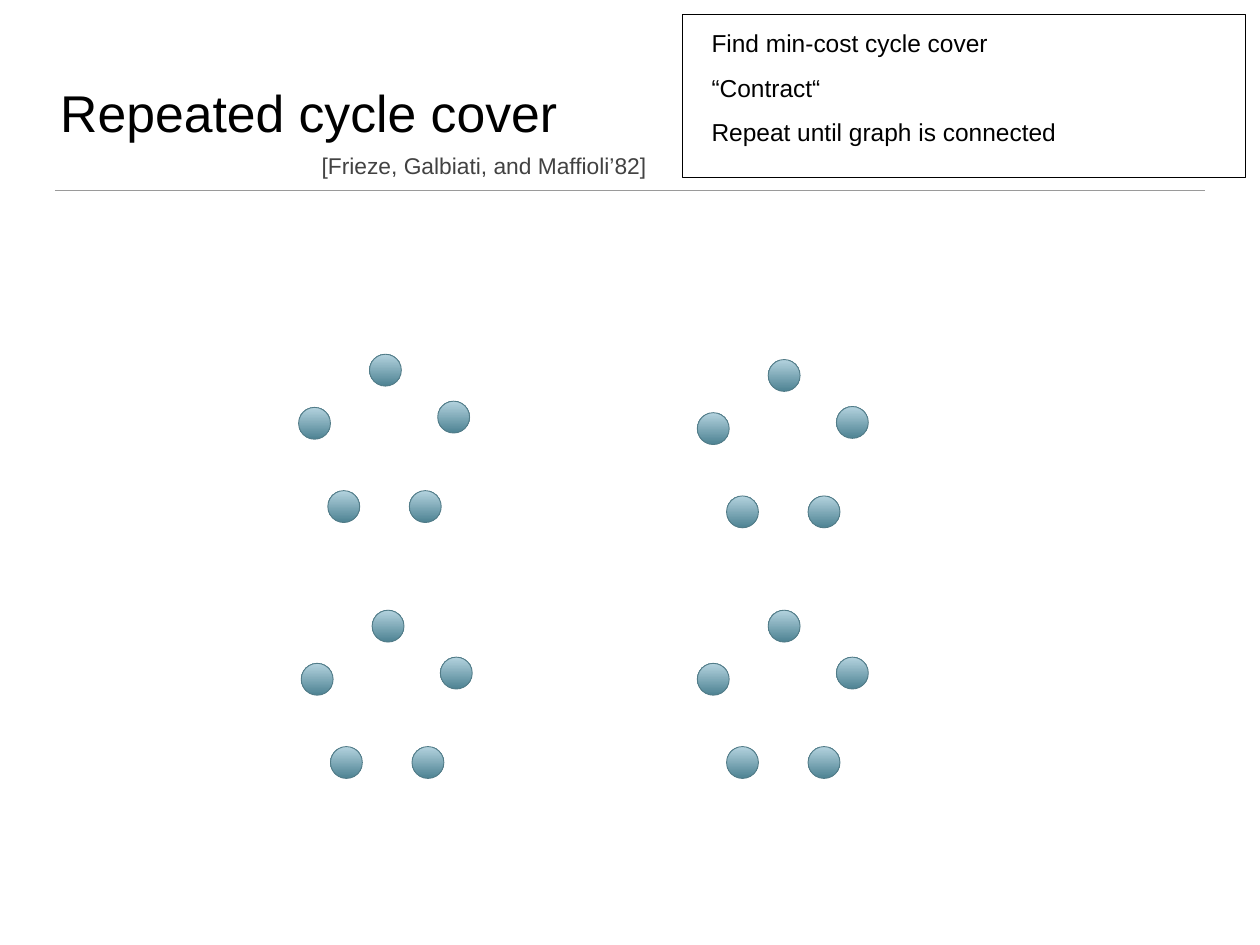
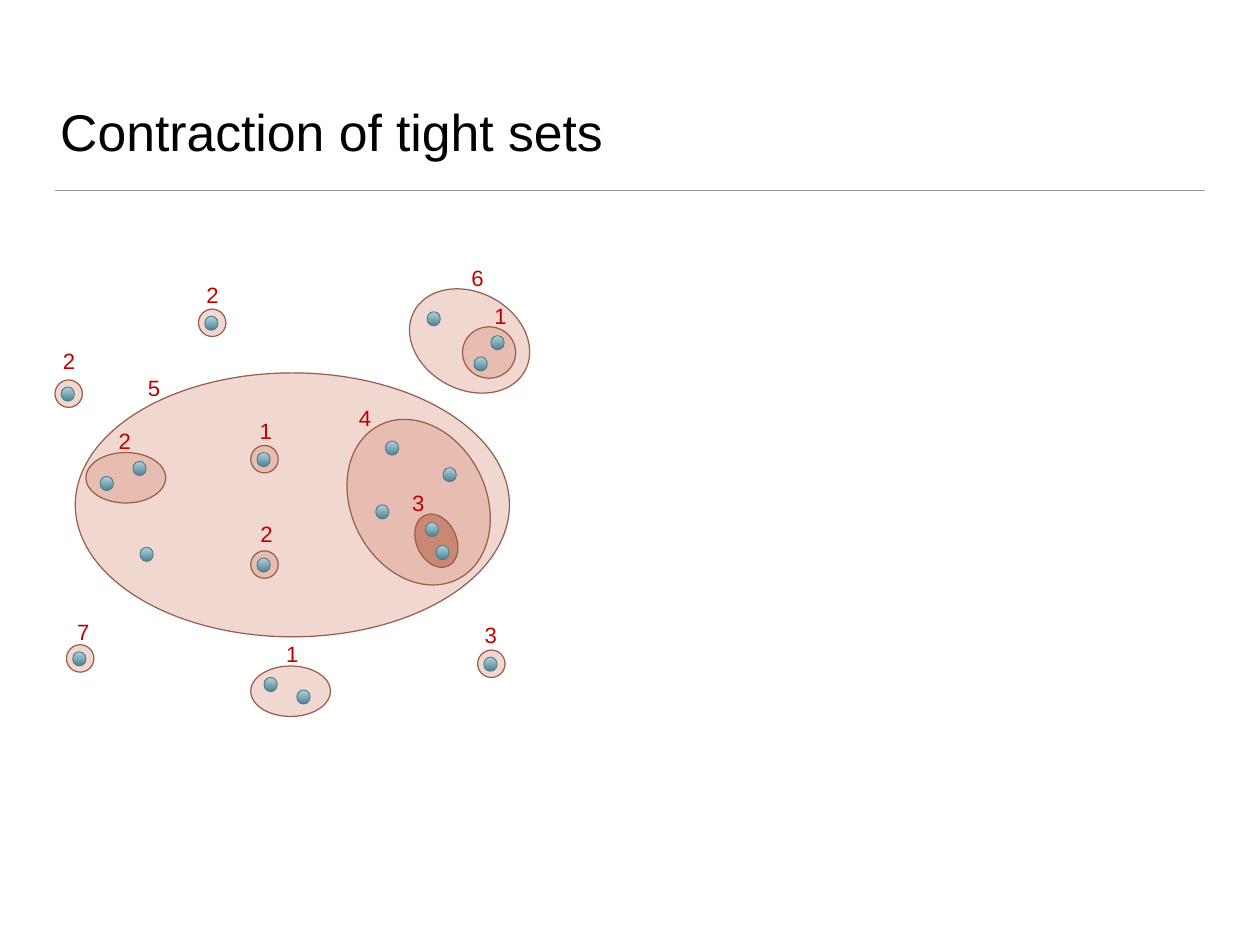
"""Build two slides on cycle covers and the contraction of tight sets."""
from dataclasses import dataclass
from typing import Optional

import pptx
import pptx.dml.color
import pptx.enum.shapes
import pptx.enum.text
import pptx.oxml.ns
import pptx.oxml.xmlchemy
import pptx.util
from pptx.util import Inches

Anchor = pptx.enum.text.MSO_ANCHOR
Align = pptx.enum.text.PP_ALIGN
Preset = pptx.enum.shapes.MSO_SHAPE
Point = tuple[float, float]


@dataclass(frozen=True)
class Theme:
    font: str = "Arial"
    black: str = "000000"
    white: str = "FFFFFF"
    citation: str = "424242"
    rule: str = "9A9A9A"
    node_dark: str = "4D8292"
    node_light: str = "B4D3DF"
    node_line: str = "527C88"
    region: str = "E2B2A3"
    core: str = "B05437"
    region_line: str = "995E4B"
    label: str = "C00000"
    title_size: float = 42
    citation_size: float = 18.5
    step_size: float = 19.9
    label_size: float = 18
    thin: float = 0.75
    medium: float = 1


THEME = Theme()


@dataclass(frozen=True)
class Box:
    left: float
    top: float
    width: float
    height: float

    def lengths(self) -> tuple:
        return tuple(Inches(value) for value in (self.left, self.top, self.width, self.height))


@dataclass(frozen=True)
class Region:
    box: Box
    label: str
    label_at: Point
    nodes: tuple[Point, ...]
    opacity: int = 50
    rotation: float = 0
    color: str = THEME.region


def singleton(left: float, top: float, label: str, label_at: Point, opacity: int = 50) -> Region:
    return Region(Box(left, top, 0.31, 0.31), label, label_at,
                  ((left + 0.07, top + 0.08),), opacity)


PENTAGON = ((0, 0.6), (0.33, 1.54), (1.25, 1.54), (1.57, 0.53), (0.8, 0))
CLUSTERS = ((3.37, 4), (7.87, 4.06), (3.4, 6.89), (7.87, 6.89))
STEPS = ("Find min-cost cycle cover", "“Contract“", "Repeat until graph is connected")
REGIONS = (
    Region(Box(1.81, 3.25, 2.98, 4.9), "5", (1.61, 4.17), ((1.58, 6.18),), rotation=270),
    singleton(2.83, 6.22, "2", (2.88, 5.82), 70),
    singleton(2.83, 5.03, "1", (2.87, 4.65), 70),
    Region(Box(0.97, 5.11, 0.9, 0.57), "2", (1.28, 4.77), ((1.13, 5.38), (1.5, 5.21)), 70),
    Region(Box(3.75, 4.91, 1.95, 1.52), "4", (3.99, 4.51),
           ((4.35, 4.98), (4.24, 5.7), (5, 5.28)), 70, 243.1),
    Region(Box(4.61, 5.88, 0.63, 0.45), "3", (4.59, 5.47),
           ((4.8, 5.9), (4.92, 6.16)), 50, 245.2, THEME.core),
    singleton(0.62, 4.29, "2", (0.65, 3.86)),
    singleton(2.24, 3.49, "2", (2.27, 3.12)),
    Region(Box(4.75, 3.14, 1.1, 1.42), "6", (5.26, 2.93), ((4.82, 3.52),), rotation=298),
    Region(Box(5.22, 3.69, 0.6, 0.58), "1", (5.52, 3.35), ((5.35, 4.03), (5.54, 3.79)), 70),
    singleton(0.75, 7.28, "7", (0.81, 6.92)),
    Region(Box(2.83, 7.52, 0.9, 0.57), "1", (3.17, 7.17), ((2.98, 7.65), (3.35, 7.79))),
    singleton(5.39, 7.34, "3", (5.41, 6.96)),
)


def rgb(color: str) -> pptx.dml.color.RGBColor:
    return pptx.dml.color.RGBColor.from_string(color)


def add_text(slide, box: Box, *lines: str, size: float, color: str = THEME.black,
             align: Align = Align.LEFT, anchor: Anchor = Anchor.TOP, wrap: bool = True,
             inset: Point = (0.06, 0.06), gap: float = 0) -> None:
    frame = slide.shapes.add_textbox(*box.lengths()).text_frame
    frame.word_wrap = wrap
    frame.auto_size = (pptx.enum.text.MSO_AUTO_SIZE.NONE if wrap
                       else pptx.enum.text.MSO_AUTO_SIZE.SHAPE_TO_FIT_TEXT)
    frame.vertical_anchor = anchor
    frame.margin_left = frame.margin_right = Inches(inset[0])
    frame.margin_top = frame.margin_bottom = Inches(inset[1])
    for index, line in enumerate(lines):
        paragraph = frame.add_paragraph() if index else frame.paragraphs[0]
        paragraph.alignment = align
        if index:
            paragraph.space_before = pptx.util.Pt(gap)
        run = paragraph.add_run()
        run.text = line
        run.font.name = THEME.font
        run.font.size = pptx.util.Pt(size)
        run.font.color.rgb = rgb(color)


def add_figure(slide, preset: Preset, box: Box, line: str, weight: float,
               fill: Optional[str] = None):
    shape = slide.shapes.add_shape(preset, *box.lengths())
    shape.shadow.inherit = False
    shape.line.color.rgb = rgb(line)
    shape.line.width = pptx.util.Pt(weight)
    if fill:
        shape.fill.solid()
        shape.fill.fore_color.rgb = rgb(fill)
    return shape


def add_node(slide, position: Point, width: float, height: float) -> None:
    shape = add_figure(slide, Preset.OVAL, Box(*position, width, height),
                       THEME.node_line, THEME.thin)
    shape.fill.gradient()
    shape.fill.gradient_angle = 90
    for stop, color in zip(shape.fill.gradient_stops, (THEME.node_dark, THEME.node_light)):
        stop.color.rgb = rgb(color)


def add_region(slide, region: Region) -> None:
    shape = add_figure(slide, Preset.OVAL, region.box, THEME.region_line,
                       THEME.medium, region.color)
    shape.rotation = region.rotation
    color = shape._element.spPr.find(".//" + pptx.oxml.ns.qn("a:srgbClr"))
    alpha = pptx.oxml.xmlchemy.OxmlElement("a:alpha")
    alpha.set("val", str(region.opacity * 1000))
    color.append(alpha)


def add_titled_slide(presentation, title: str, top: float):
    slide = presentation.slides.add_slide(presentation.slide_layouts[6])
    rule = slide.shapes.add_connector(pptx.enum.shapes.MSO_CONNECTOR.STRAIGHT,
                                      Inches(0.62), Inches(2.15), Inches(13.6), Inches(2.15))
    rule.line.color.rgb = rgb(THEME.rule)
    rule.line.width = pptx.util.Pt(THEME.medium)
    rule._element.spPr.append(pptx.oxml.xmlchemy.OxmlElement("a:effectLst"))
    add_text(slide, Box(0.62, top, 12.97, 1.53), title,
             size=THEME.title_size, anchor=Anchor.BOTTOM)
    return slide


def build_cycle_cover(presentation) -> None:
    slide = add_titled_slide(presentation, "Repeated cycle cover", 0.14)
    add_text(slide, Box(3.57, 1.65, 3.99, 0.57), "[Frieze, Galbiati, and Maffioli’82]",
             size=THEME.citation_size, color=THEME.citation)
    add_figure(slide, Preset.RECTANGLE, Box(7.7, 0.16, 6.36, 1.84),
               THEME.black, THEME.thin, THEME.white)
    add_text(slide, Box(7.89, 0.25, 6.37, 1.91), *STEPS,
             size=THEME.step_size, inset=(0.14, 0.07), gap=12.2)
    for left, top in CLUSTERS:
        for across, down in PENTAGON:
            add_node(slide, (left + across, top + down), 0.36, 0.36)


def build_contraction(presentation) -> None:
    slide = add_titled_slide(presentation, "Contraction of tight sets", 0.36)
    for region in REGIONS:
        add_region(slide, region)
    for region in REGIONS:
        for position in region.nodes:
            add_node(slide, position, 0.15, 0.16)
    for region in REGIONS:
        add_text(slide, Box(*region.label_at, 0.25, 0.42), region.label,
                 size=THEME.label_size, color=THEME.label, align=Align.CENTER,
                 anchor=Anchor.MIDDLE, wrap=False)


def main() -> None:
    presentation = pptx.Presentation()
    presentation.slide_width = Inches(14.22)
    presentation.slide_height = Inches(10.67)
    build_cycle_cover(presentation)
    build_contraction(presentation)
    presentation.save("out.pptx")


if __name__ == "__main__":
    main()
